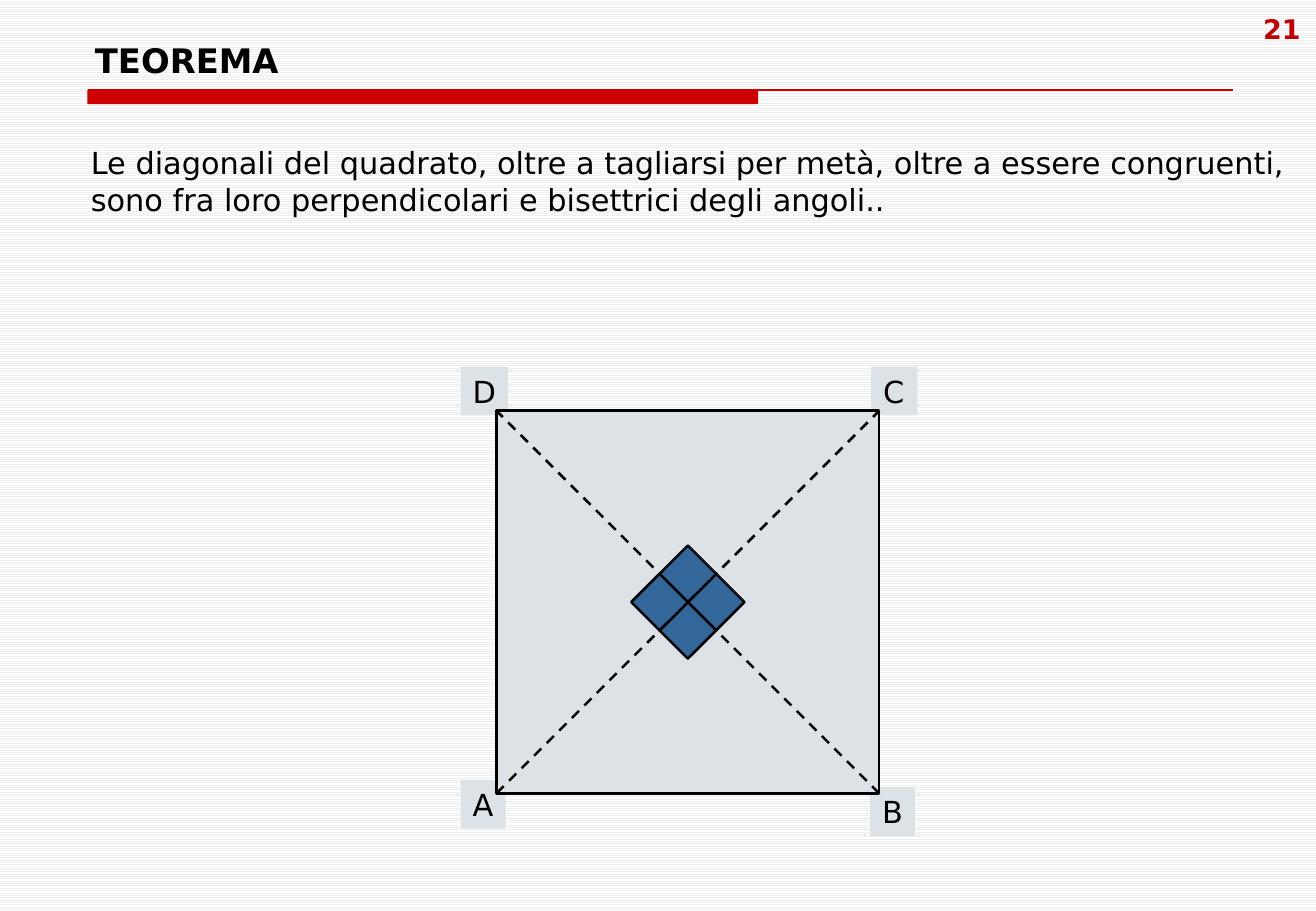
from lxml import etree
from pptx import Presentation
from pptx.dml.color import RGBColor
from pptx.enum.dml import MSO_LINE, MSO_PATTERN
from pptx.enum.shapes import MSO_CONNECTOR, MSO_SHAPE
from pptx.enum.text import MSO_ANCHOR, MSO_AUTO_SIZE, PP_ALIGN
from pptx.oxml.ns import qn
from pptx.util import Cm, Pt

RECTANGLE = MSO_SHAPE.RECTANGLE
STRAIGHT = MSO_CONNECTOR.STRAIGHT
DASH = MSO_LINE.DASH
LIGHT_HORIZONTAL = MSO_PATTERN.LIGHT_HORIZONTAL
LEFT, CENTER = PP_ALIGN.LEFT, PP_ALIGN.CENTER
TOP, BOTTOM = MSO_ANCHOR.TOP, MSO_ANCHOR.BOTTOM
NO_FIT, GROW = MSO_AUTO_SIZE.NONE, MSO_AUTO_SIZE.SHAPE_TO_FIT_TEXT


def color(value):
    return RGBColor.from_string(value)


def write(frame, text, size=18, ink="000000", bold=False, align=LEFT,
          anchor=TOP, wrap=True, fit=NO_FIT):
    frame.word_wrap = wrap
    frame.auto_size = fit
    frame.vertical_anchor = anchor
    para = frame.paragraphs[0]
    para.alignment = align
    span = para.add_run()
    span.text = text
    span.font.name = SlideBuilder.font
    span.font.size = Pt(size)
    span.font.bold = bold
    span.font.color.rgb = color(ink)


class SlideBuilder:
    """Holds the theorem's style and the page being drawn."""

    font = "DejaVu Sans"
    red = "CC0000"
    number_red = "C00000"
    pale = "DDE2E7"
    blue = "336699"
    black = "000000"

    def __init__(self, deck):
        self.page = deck.slides.add_slide(deck.slide_layouts[5])

    def background(self, front, back):
        fill = self.page.background.fill
        fill.patterned()
        fill.pattern = LIGHT_HORIZONTAL
        fill.fore_color.rgb = color(front)
        fill.back_color.rgb = color(back)

    def title(self, text, left, top, width, height):
        box = self.page.shapes.title
        box.left, box.top = Cm(left), Cm(top)
        box.width, box.height = Cm(width), Cm(height)
        write(box.text_frame, text, size=20, bold=True, anchor=BOTTOM)

    def text(self, text, left, top, width, height, **style):
        box = self.page.shapes.add_textbox(Cm(left), Cm(top), Cm(width), Cm(height))
        write(box.text_frame, text, **style)

    def rectangle(self, left, top, width, height, fill, outline=None, rotation=0):
        box = self.page.shapes.add_shape(
            RECTANGLE, Cm(left), Cm(top), Cm(width), Cm(height))
        box.shadow.inherit = False
        box.rotation = rotation
        box.fill.solid()
        box.fill.fore_color.rgb = color(fill)
        if outline:
            box.line.color.rgb = color(outline)
            box.line.width = Pt(1.5)
        else:
            box.line.fill.background()
        return box

    def label(self, letter, left, top, width):
        box = self.rectangle(left, top, width, 1.02, self.pale)
        write(box.text_frame, letter, wrap=False, fit=GROW)

    def line(self, start, end, ink, width, dash=None):
        line = self.page.shapes.add_connector(
            STRAIGHT, Cm(start[0]), Cm(start[1]), Cm(end[0]), Cm(end[1]))
        line.line.color.rgb = color(ink)
        line.line.width = Pt(width)
        if dash:
            line.line.dash_style = dash
        etree.SubElement(line._element.spPr, qn("a:effectLst"))


def draw_square(slide, left, top, side):
    """Draw the square with its vertices, diagonals and right-angle marks."""
    right, bottom = left + side, top + side
    middle_x, middle_y = left + side / 2, top + side / 2

    for letter, x, y, width in (("A", 9.63, 16.31, 0.94), ("B", 18.19, 16.46, 0.94),
                                ("C", 18.21, 7.67, 0.97), ("D", 9.63, 7.67, 0.99)):
        slide.label(letter, x, y, width)
    slide.rectangle(left, top, side, side, slide.pale, slide.black)
    slide.line((left, bottom), (right, top), slide.black, 1.5, DASH)
    slide.line((right, bottom), (left, top), slide.black, 1.5, DASH)

    mark, offset = 0.84, 0.59
    for step_x, step_y in ((1, 0), (0, -1), (0, 1), (-1, 0)):
        slide.rectangle(middle_x + step_x * offset - mark / 2,
                        middle_y + step_y * offset - mark / 2,
                        mark, mark, slide.blue, slide.black, rotation=315)


def main():
    deck = Presentation()
    deck.slide_width, deck.slide_height = Cm(27.51), Cm(19.05)
    slide = SlideBuilder(deck)
    slide.background("EEEEEE", "FFFFFF")
    slide.title("TEOREMA", 1.73, 0.84, 24.08, 0.97)
    slide.rectangle(1.83, 1.88, 14.02, 0.3, slide.red)
    slide.line((1.83, 1.88), (25.78, 1.88), slide.red, 0.75)
    slide.text("21", 25.86, 0.13, 1.88, 1.32, size=16, bold=True,
               ink=slide.number_red, align=CENTER)
    slide.text("Le diagonali del quadrato, oltre a tagliarsi per metà, oltre a essere "
               "congruenti, sono fra loro perpendicolari e bisettrici degli angoli..",
               1.65, 2.9, 25.86, 1.78, fit=GROW)
    draw_square(slide, left=10.38, top=8.59, side=8)
    deck.save("out.pptx")


if __name__ == "__main__":
    main()
